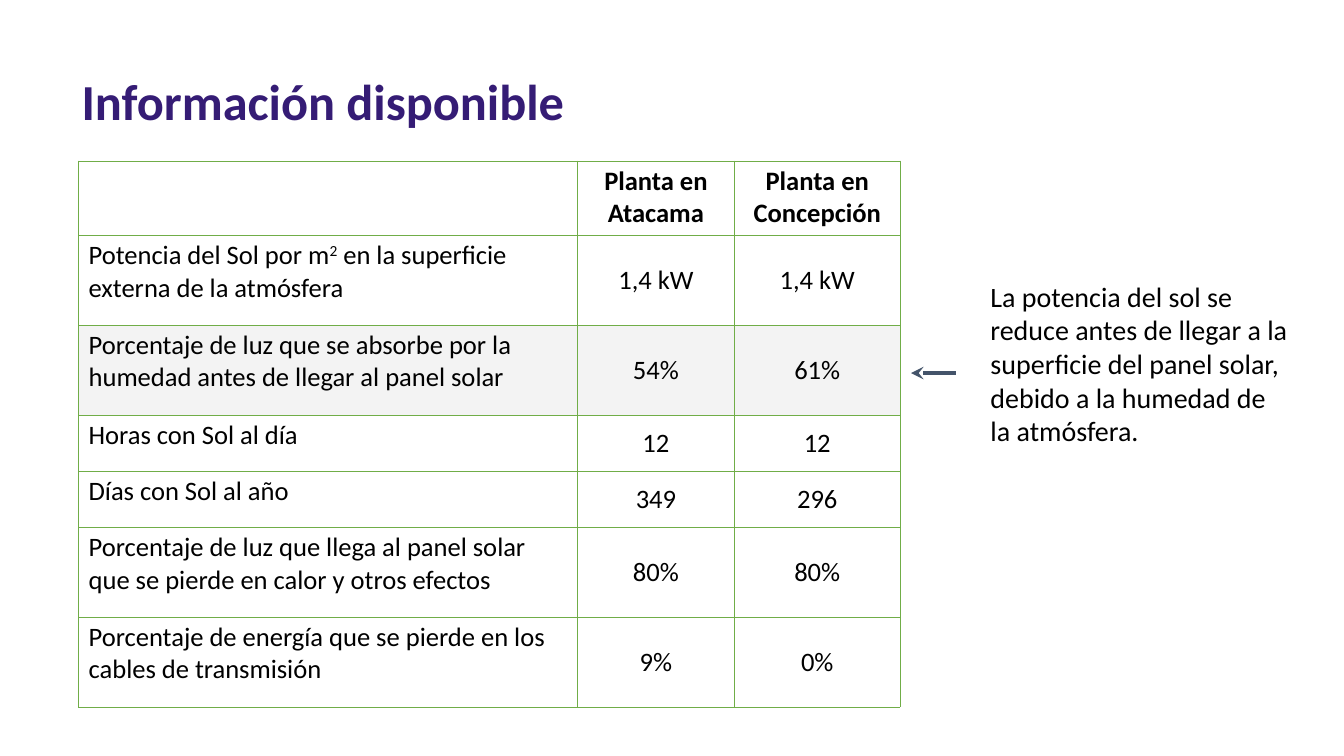
from dataclasses import dataclass
from lxml import etree
from pptx import Presentation
from pptx.dml.color import RGBColor
from pptx.enum import shapes, text
from pptx.oxml import ns
from pptx.util import Cm, Pt

TITLE = "Información disponible"
HEAD = ["", "Planta en Atacama", "Planta en Concepción"]
ROWS = [
    (["Potencia del Sol por m", "2", " en la superficie externa de la atmósfera"], "1,4 kW", "1,4 kW"),
    (["Porcentaje de luz que se absorbe por la humedad antes de llegar al panel solar"], "54%", "61%"),
    (["Horas con Sol al día"], "12", "12"),
    (["Días con Sol al año"], "349", "296"),
    (["Porcentaje de luz que llega al panel solar que se pierde en calor y otros efectos"], "80%", "80%"),
    (["Porcentaje de energía que se pierde en los cables de transmisión"], "9%", "0%"),
]
NOTE = ("La potencia del sol se reduce antes de llegar a la superficie del panel solar, "
        "debido a la humedad de la atmósfera.")
MARKED = 2
WIDTHS = [12.57, 3.96, 4.17]
SHORT, TALL, TOP = 1.42, 2.26, 1.88
HEIGHTS = [TOP, TALL, TALL, SHORT, SHORT, TALL, TALL]


@dataclass(frozen=True)
class Theme:
    font: str = "Calibri"
    title: str = "351C75"
    ink: str = "000000"
    grid: str = "70AD47"
    band: str = "F3F3F3"
    arrow: str = "44546A"
    big: int = 36
    cell: int = 19
    note: int = 20


T = Theme()


def style(para, size, color=T.ink, bold=False):
    for run in para.runs:
        font = run.font
        font.name, font.size, font.bold = T.font, Pt(size), bold
        font.color.rgb = RGBColor.from_string(color)


def border(cell):
    props = cell._tc.get_or_add_tcPr()
    for side in ("lnL", "lnR", "lnT", "lnB"):
        line = etree.SubElement(props, ns.qn("a:" + side), w=str(Pt(0.75)))
        fill = etree.SubElement(line, ns.qn("a:solidFill"))
        etree.SubElement(fill, ns.qn("a:srgbClr"), val=T.grid)


def fill_cell(cell, parts, row, col):
    cell.margin_top = cell.margin_bottom = Cm(0.1)
    para = cell.text_frame.paragraphs[0]
    for part in parts:
        para.add_run().text = part
    style(para, T.cell, bold=row == 0)
    if len(parts) > 1:
        para.runs[1]._r.get_or_add_rPr().set("baseline", "30000")
    if col:
        para.alignment = text.PP_ALIGN.CENTER
    if row and col:
        cell.vertical_anchor = text.MSO_ANCHOR.MIDDLE
    border(cell)
    if row == MARKED:
        cell.fill.solid()
        cell.fill.fore_color.rgb = RGBColor.from_string(T.band)
    else:
        cell.fill.background()


def add_grid(slide):
    frame = slide.shapes.add_table(len(HEIGHTS), len(WIDTHS), Cm(1.98), Cm(4.06),
                                   Cm(sum(WIDTHS)), Cm(sum(HEIGHTS)))
    table = frame.table
    table.first_row = table.horz_banding = False
    for col, width in zip(table.columns, WIDTHS):
        col.width = Cm(width)
    for row, height in zip(table.rows, HEIGHTS):
        row.height = Cm(height)
    for i, row in enumerate([HEAD] + ROWS):
        for j, item in enumerate(row):
            parts = [item] if isinstance(item, str) else item
            fill_cell(table.cell(i, j), [p for p in parts if p], i, j)


def set_box(box, words, size, color, bold=False):
    frame = box.text_frame
    frame.text = words
    frame.word_wrap = True
    frame.auto_size = text.MSO_AUTO_SIZE.SHAPE_TO_FIT_TEXT
    frame.vertical_anchor = text.MSO_ANCHOR.TOP
    frame.paragraphs[0].alignment = text.PP_ALIGN.LEFT
    style(frame.paragraphs[0], size, color, bold)


def add_arrow(slide):
    y = Cm(9.4)
    arrow = slide.shapes.add_connector(shapes.MSO_CONNECTOR.STRAIGHT, Cm(24.08), y, Cm(22.96), y)
    arrow.line.width = Pt(3)
    arrow.line.color.rgb = RGBColor.from_string(T.arrow)
    etree.SubElement(arrow.line._get_or_add_ln(), ns.qn("a:tailEnd"), type="stealth")
    etree.SubElement(arrow._element.spPr, ns.qn("a:effectLst"))


def main():
    deck = Presentation()
    deck.slide_width, deck.slide_height = Cm(33.87), Cm(19.05)
    slide = deck.slides.add_slide(deck.slide_layouts[5])
    title = slide.shapes.title
    title.left, title.top, title.width, title.height = Cm(1.8), Cm(1.65), Cm(21.82), Cm(1.8)
    set_box(title, TITLE, T.big, T.title, True)
    add_grid(slide)
    note = slide.shapes.add_textbox(Cm(24.71), Cm(6.91), Cm(8), Cm(4.52))
    set_box(note, NOTE, T.note, T.ink)
    add_arrow(slide)
    deck.save("out.pptx")


if __name__ == "__main__":
    main()
